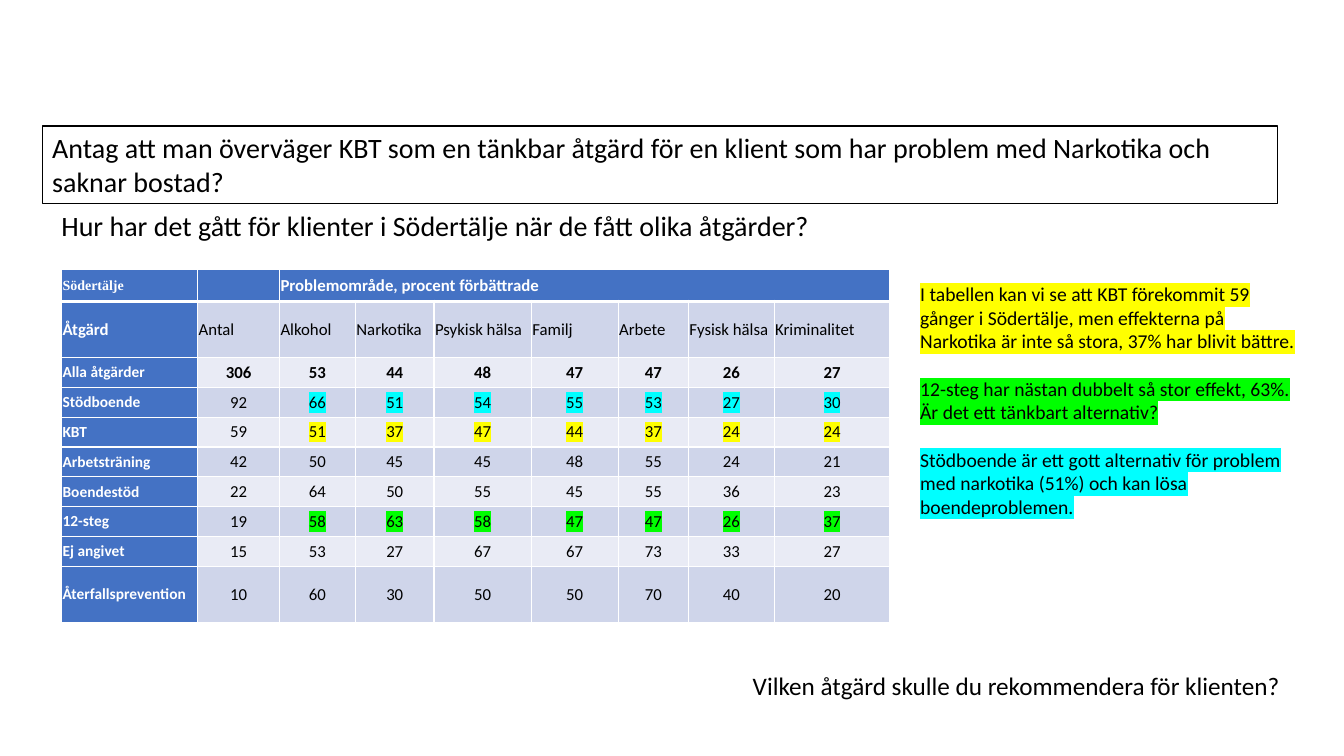
from lxml import etree
from pptx import Presentation
from pptx.dml.color import RGBColor
from pptx.enum.text import MSO_ANCHOR as Anchor, PP_ALIGN as Align
from pptx.oxml.ns import qn
from pptx.util import Pt

CASE = "Antag att man överväger KBT som en tänkbar åtgärd för en klient som har problem med Narkotika och saknar bostad?"
TITLE = "Hur har det gått för klienter i Södertälje när de fått olika åtgärder?"
ASK = "Vilken åtgärd skulle du rekommendera för klienten?"

YELLOW, GREEN, CYAN = "FFFF00", "00FF00", "00FFFF"
BLACK, WHITE, BLUE = "000000", "FFFFFF", "4472C4"
BANDS = ("E9EBF5", "CFD5EA")

NOTES = [
    ("I tabellen kan vi se att KBT förekommit 59 gånger i Södertälje, men effekterna på Narkotika är inte så stora, 37% har blivit bättre.", YELLOW),
    ("12-steg har nästan dubbelt så stor effekt, 63%. Är det ett tänkbart alternativ?", GREEN),
    ("Stödboende är ett gott alternativ för problem med narkotika (51%) och kan lösa boendeproblemen.", CYAN),
]

ROWS = [
    ("Södertälje", "", "Problemområde, procent förbättrade"),
    ("Åtgärd", "Antal", "Alkohol", "Narkotika", "Psykisk hälsa", "Familj", "Arbete", "Fysisk hälsa", "Kriminalitet"),
    ("Alla åtgärder", 306, 53, 44, 48, 47, 47, 26, 27),
    ("Stödboende", 92, 66, 51, 54, 55, 53, 27, 30),
    ("KBT", 59, 51, 37, 47, 44, 37, 24, 24),
    ("Arbetsträning", 42, 50, 45, 45, 48, 55, 24, 21),
    ("Boendestöd", 22, 64, 50, 55, 45, 55, 36, 23),
    ("12-steg", 19, 58, 63, 58, 47, 47, 26, 37),
    ("Ej angivet", 15, 53, 27, 67, 67, 73, 33, 27),
    ("Återfallsprevention", 10, 60, 30, 50, 50, 70, 40, 20),
]
MARKS = {"Stödboende": CYAN, "KBT": YELLOW, "12-steg": GREEN}
WIDTHS = [97.2, 58.5, 54.2, 56.2, 69.5, 62, 50.2, 61.3, 82.7]
HEIGHTS = [23, 40.2] + [21.3] * 7 + [40.2]


def rgb(code):
    return RGBColor.from_string(code)


def style(para, size, color=BLACK, bold=False, mark=None, face="Calibri"):
    for run in para.runs:
        font = run.font
        font.size, font.bold, font.name = Pt(size), bold, face
        font.color.rgb = rgb(color)
        if mark:
            glow = etree.Element(qn("a:highlight"))
            etree.SubElement(glow, qn("a:srgbClr")).set("val", mark)
            font._element.find(qn("a:solidFill")).addnext(glow)


def add_text(slide, box, size, lines, gap=0, wrap=True):
    """Add a text box; lines holds (text, highlight) pairs."""
    shape = slide.shapes.add_textbox(*map(Pt, box))
    frame = shape.text_frame
    frame.word_wrap = wrap
    for i, (text, mark) in enumerate(lines):
        para = frame.paragraphs[0] if i == 0 else frame.add_paragraph()
        para.text = text
        para.space_before = Pt(gap if i else 0)
        style(para, size, mark=mark)
    return shape


def edge(cell, row):
    """Draw white cell borders, thick between the top two rows."""
    props = cell._tc.get_or_add_tcPr()
    for side in "LRTB":
        thick = (row, side) in ((0, "B"), (1, "T"))
        line = etree.SubElement(props, qn("a:ln" + side), w=str(Pt(3 if thick else 1)))
        fill = etree.SubElement(line, qn("a:solidFill"))
        etree.SubElement(fill, qn("a:srgbClr")).set("val", WHITE)


def fill_cell(cell, r, c):
    head = r == 0 or c == 0
    edge(cell, r)
    cell.fill.solid()
    cell.fill.fore_color.rgb = rgb(BLUE if head else BANDS[r % 2])
    cell.vertical_anchor = Anchor.MIDDLE
    cell.margin_left = cell.margin_right = Pt(0.72)
    cell.margin_top = cell.margin_bottom = 0
    if c >= len(ROWS[r]):
        return
    cell.text = str(ROWS[r][c])
    para = cell.text_frame.paragraphs[0]
    if r > 1 and c:
        para.alignment = Align.CENTER
    size = 11 if r > 1 and c == 0 else 12
    if r == c == 0:
        style(para, 10, WHITE, True, face="Times New Roman")
    else:
        mark = MARKS.get(ROWS[r][0]) if c > 1 else None
        style(para, size, WHITE if head else BLACK, head or r == 2, mark)


def add_grid(slide):
    table = slide.shapes.add_table(
        len(ROWS), len(WIDTHS), Pt(44), Pt(192.3), Pt(sum(WIDTHS)), Pt(sum(HEIGHTS))
    ).table
    table.horz_banding = False
    for col, width in zip(table.columns, WIDTHS):
        col.width = Pt(width)
    for r, height in enumerate(HEIGHTS):
        table.rows[r].height = Pt(height)
        for c in range(len(WIDTHS)):
            fill_cell(table.cell(r, c), r, c)
    table.cell(0, 2).merge(table.cell(0, len(WIDTHS) - 1))


def main():
    deck = Presentation()
    deck.slide_width, deck.slide_height = Pt(960), Pt(540)
    slide = deck.slides.add_slide(deck.slide_layouts[6])

    title = add_text(slide, (36.7, 146.2, 822.2, 33.1), 20, [(TITLE, None)])
    title.text_frame.vertical_anchor = Anchor.MIDDLE
    title.text_frame.paragraphs[0].line_spacing = 0.9

    add_grid(slide)

    case = add_text(slide, (30.2, 90, 882.7, 55.7), 20, [(CASE, None)])
    case.line.color.rgb = rgb(BLACK)
    case.line.width = Pt(0.75)

    add_text(slide, (650.2, 198, 285.1, 177.1), 14, NOTES, gap=17)
    add_text(slide, (530.6, 475.2, 399.6, 28.8), 18, [(ASK, None)], wrap=False)
    deck.save("out.pptx")


if __name__ == "__main__":
    main()
